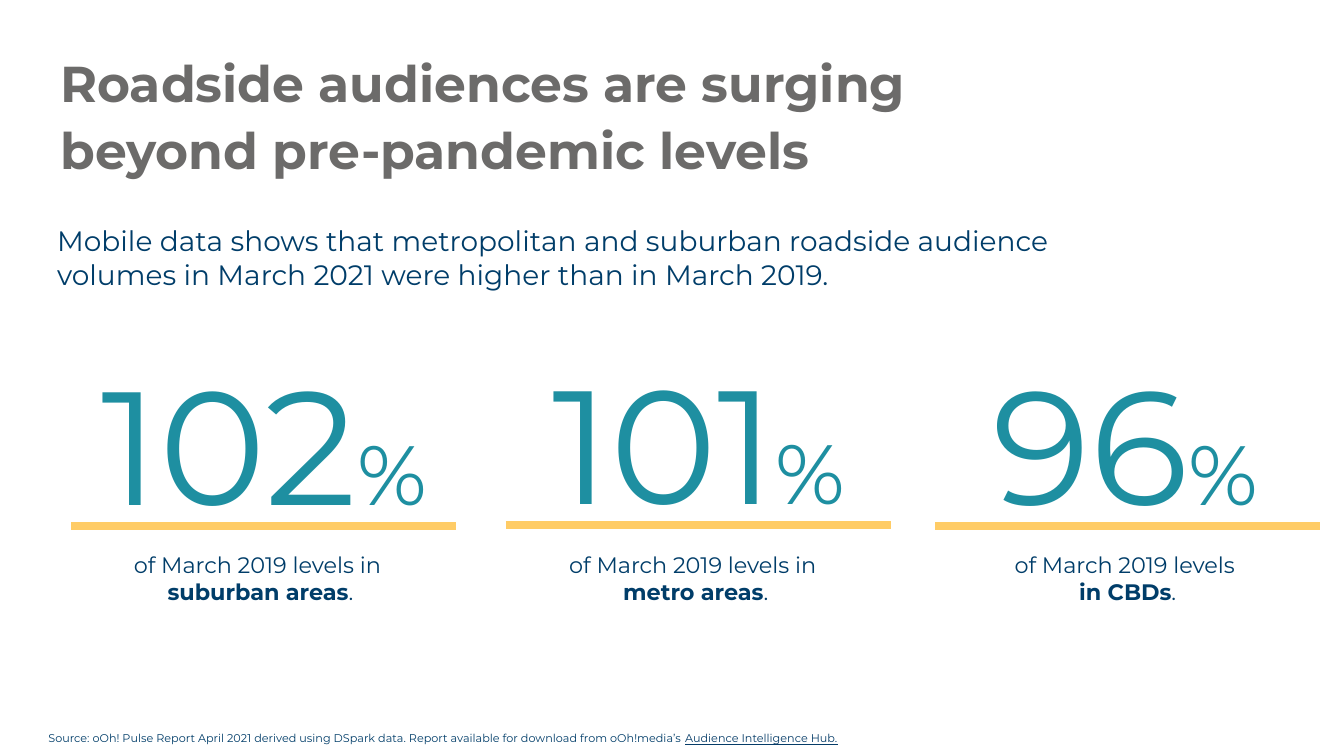
from dataclasses import dataclass
from typing import Any, NamedTuple

import pptx
import pptx.dml.color
import pptx.enum.shapes
import pptx.enum.text
import pptx.oxml.ns
import pptx.slide
import pptx.util
from lxml import etree

Cm = pptx.util.Cm
Pt = pptx.util.Pt
RGBColor = pptx.dml.color.RGBColor
ALIGN = pptx.enum.text.PP_ALIGN

GREY = RGBColor(0x6C, 0x6B, 0x6A)
NAVY = RGBColor(0x00, 0x3D, 0x69)
LINK_NAVY = RGBColor(0x06, 0x3C, 0x68)
TEAL = RGBColor(0x1E, 0x8F, 0xA1)
YELLOW = RGBColor(0xFF, 0xCC, 0x66)

FONT = "Montserrat"
RULE_WIDTH = 9.7
FIGURE_HEIGHT = 5.18
CAPTION_TOP = 13.77
BREAK = "\n"


class Box(NamedTuple):
    """Left, top, width and height in centimetres."""
    left: float
    top: float
    width: float
    height: float


class Run(NamedTuple):
    text: str
    size: float
    color: RGBColor
    formats: dict[str, Any] = {}


@dataclass
class Statistic:
    number: str
    figure_left: float
    figure_top: float
    figure_width: float
    rule_left: float
    rule_top: float
    lead: str
    area: str
    caption_left: float
    caption_width: float


STATISTICS = [
    Statistic("102", 1.8, 8.56, 9.7, 1.8, 13.26,
              "of March 2019 levels in ", "suburban areas", 1.65, 9.83),
    Statistic("101", 12.24, 8.53, 10.74, 12.75, 13.23,
              "of March 2019 levels in ", "metro areas", 12.62, 9.83),
    Statistic("96", 24.05, 8.56, 8.64, 23.57, 13.26,
              "of March 2019 levels ", "in CBDs", 23.57, 9.7),
]


def add_text(slide: pptx.slide.Slide, box: Box, runs: list[Run],
             align: ALIGN = ALIGN.LEFT, line_spacing: float = 1.0,
             frame_formats: dict[str, Any] | None = None) -> None:
    """Add a wrapped text box holding one paragraph."""
    shape = slide.shapes.add_textbox(*(Cm(length) for length in box))
    frame = shape.text_frame
    frame.word_wrap = True
    frame.auto_size = pptx.enum.text.MSO_AUTO_SIZE.SHAPE_TO_FIT_TEXT
    for name, value in (frame_formats or {}).items():
        setattr(frame, name, value)
    paragraph = frame.paragraphs[0]
    paragraph.alignment = align
    paragraph.line_spacing = line_spacing
    for item in runs:
        if item.text == BREAK:
            paragraph.add_line_break()
            continue
        run = paragraph.add_run()
        run.text = item.text
        formats = {"name": FONT, "size": Pt(item.size), **item.formats}
        for name, value in formats.items():
            setattr(run.font, name, value)
        run.font.color.rgb = item.color


def add_rule(slide: pptx.slide.Slide, left: float, top: float) -> None:
    """Add a thick horizontal line without a shadow."""
    connector = slide.shapes.add_connector(
        pptx.enum.shapes.MSO_CONNECTOR.STRAIGHT,
        Cm(left), Cm(top), Cm(left + RULE_WIDTH), Cm(top))
    connector.line.color.rgb = YELLOW
    connector.line.width = Pt(6)
    properties = connector._element.spPr
    etree.SubElement(properties, pptx.oxml.ns.qn("a:effectLst"))


def add_statistic(slide: pptx.slide.Slide, statistic: Statistic) -> None:
    """Add a large percentage, its rule and its caption."""
    figure = Box(statistic.figure_left, statistic.figure_top,
                 statistic.figure_width, FIGURE_HEIGHT)
    add_text(slide, figure,
             [Run(statistic.number, 115, TEAL), Run("%", 60, TEAL)], ALIGN.CENTER)
    add_rule(slide, statistic.rule_left, statistic.rule_top)
    caption = Box(statistic.caption_left, CAPTION_TOP, statistic.caption_width, 1.63)
    add_text(slide, caption,
             [Run(statistic.lead, 16, NAVY), Run(BREAK, 16, NAVY),
              Run(statistic.area, 16, NAVY, {"bold": True}), Run(".", 16, NAVY)],
             ALIGN.CENTER)


def main() -> None:
    presentation = pptx.Presentation()
    presentation.slide_width = Cm(33.87)
    presentation.slide_height = Cm(19.05)
    slide = presentation.slides.add_slide(presentation.slide_layouts[6])

    # Title and introduction
    no_margins = {f"margin_{side}": 0 for side in ("left", "top", "right", "bottom")}
    add_text(slide, Box(1.52, 1.17, 23.44, 3.4),
             [Run("Roadside audiences are surging beyond pre-pandemic levels",
                  36, GREY, {"bold": True})],
             line_spacing=1.1, frame_formats=no_margins)
    add_text(slide, Box(1.19, 5.51, 27.64, 1.96),
             [Run("Mobile data shows that metropolitan and suburban roadside audience "
                  "volumes in March 2021 were higher than in March 2019.", 20, NAVY)])

    # Three statistics
    for statistic in STATISTICS:
        add_statistic(slide, statistic)

    # Source line
    add_text(slide, Box(0.97, 18.31, 29.87, 0.61),
             [Run("Source: oOh! Pulse Report April 2021 derived using DSpark data. "
                  "Report available for download from oOh!media’s ", 8, NAVY),
              Run("Audience Intelligence Hub.", 8, LINK_NAVY, {"underline": True})])

    presentation.save("out.pptx")


if __name__ == "__main__":
    main()
